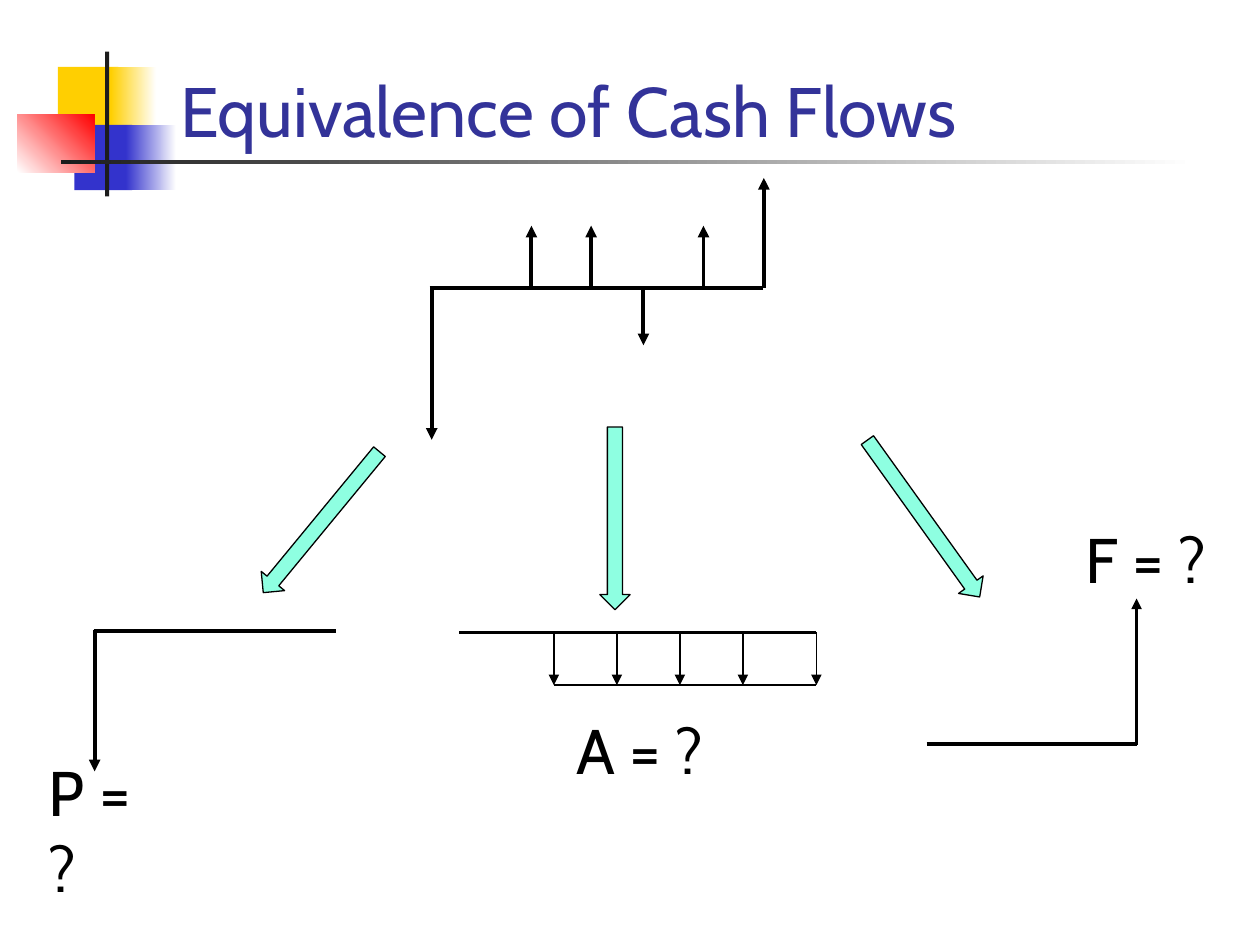
from lxml import etree
from pptx import Presentation
from pptx import util as u
from pptx.dml.color import RGBColor
from pptx.enum import shapes, text
from pptx.oxml.ns import qn

Pt = u.Pt
FONT = "Cabin"
BLACK, DARK, WHITE = "000000", "1C1C1C", "FFFFFF"
YELLOW, BLUE, RED = "FFCF01", "3333CC", "FF0000"
NAVY, MINT = "333399", "8EFFE1"


def color(fmt, value):
    fmt.rgb = RGBColor.from_string(value)


def add_text(tf, content, size=36, fill=BLACK, wrap=False,
             anchor=text.MSO_ANCHOR.TOP, fit=text.MSO_AUTO_SIZE.NONE):
    tf.word_wrap = wrap
    tf.auto_size = fit
    tf.vertical_anchor = anchor
    p = tf.paragraphs[0]
    p.alignment = text.PP_ALIGN.LEFT
    r = p.add_run()
    r.text = content
    r.font.name, r.font.size = FONT, Pt(size)
    color(r.font.color, fill)


def add_label(parent, content, x, y, w, h, wrap=False):
    sp = parent.shapes.add_textbox(Pt(x), Pt(y), Pt(w), Pt(h))
    add_text(sp.text_frame, content, wrap=wrap,
             fit=text.MSO_AUTO_SIZE.SHAPE_TO_FIT_TEXT)


def add_block(s, x, y, w, h, start, end=None, angle=0):
    """Borderless rectangle, solid or fading from start to end."""
    sp = s.shapes.add_shape(shapes.MSO_SHAPE.RECTANGLE, Pt(x), Pt(y), Pt(w), Pt(h))
    sp.shadow.inherit = False
    sp.line.fill.background()
    if end is None:
        sp.fill.solid()
        color(sp.fill.fore_color, start)
        return
    sp.fill.gradient()
    sp.fill.gradient_angle = angle
    for stop, position, value in zip(sp.fill.gradient_stops, (0, 1), (start, end)):
        stop.position = position
        color(stop.color, value)


def add_line(parent, x1, y1, x2, y2, width=2, arrow=False):
    sp = parent.shapes.add_connector(shapes.MSO_CONNECTOR.STRAIGHT,
                                     Pt(x1), Pt(y1), Pt(x2), Pt(y2))
    sp.line.width = Pt(width)
    color(sp.line.color, BLACK)
    if arrow:
        etree.SubElement(sp.line._get_or_add_ln(), qn("a:tailEnd"), type="triangle")
    etree.SubElement(sp._element.spPr, qn("a:effectLst"))


def add_block_arrow(s, x, y, h, rotation):
    sp = s.shapes.add_shape(shapes.MSO_SHAPE.DOWN_ARROW, Pt(x), Pt(y), Pt(17.3), Pt(h))
    sp.shadow.inherit = False
    sp.rotation = rotation
    sp.fill.solid()
    color(sp.fill.fore_color, MINT)
    color(sp.line.color, BLACK)
    sp.line.width = Pt(0.75)


def add_decoration(s):
    add_block(s, 33.1, 38.2, 34.6, 37.4, YELLOW)
    add_block(s, 63.4, 38.2, 25.9, 37.4, YELLOW, WHITE)
    add_block(s, 42.5, 71.3, 33.1, 37.4, BLUE)
    add_block(s, 72, 71.3, 28.8, 37.4, BLUE, WHITE)
    add_block(s, 10, 65.5, 44, 33.1, WHITE, RED, angle=45)
    add_block(s, 60, 29.5, 2.4, 82.8, DARK)
    add_block(s, 34.8, 91.4, 648, 2.4, DARK, WHITE)


def add_original_flow(s):
    g = s.shapes.add_group_shape()
    axis = 164.4
    add_line(g, 245.5, axis, 436, axis, 2.25)
    for x, tip in ((246.7, 251.3), (303.7, 129), (337.8, 129),
                   (367.7, 197.3), (402, 129), (436.5, 101.7)):
        add_line(g, x, axis, x, tip, 2.25, arrow=True)


def add_future(s):
    g = s.shapes.add_group_shape()
    add_line(g, 529.5, 425.3, 649.5, 425.3)
    add_line(g, 649.5, 426, 649.5, 342, arrow=True)
    add_label(g, "F = ?", 613.4, 293.8, 88.6, 50.4)


def add_annuity(s):
    g = s.shapes.add_group_shape()
    top, bottom, first, last = 361.4, 391.5, 316.5, 466.5
    add_line(g, 262.5, top, last, top)
    for x in [first + 36 * i for i in range(4)] + [last]:
        add_line(g, x, top, x, bottom, 1, arrow=True)
    add_line(g, first, bottom, last, bottom, 1)
    add_label(g, "A = ?", 322.6, 403.2, 94.3, 50.4)


def add_present(s):
    g = s.shapes.add_group_shape()
    add_line(g, 53.5, 360.7, 192, 360.7)
    add_line(g, 54.1, 360, 54.1, 440.8, 2.25, arrow=True)
    add_label(g, "P = ?", 20.9, 427, 64.8, 46.8, wrap=True)


def main():
    prs = Presentation()
    prs.slide_width, prs.slide_height = Pt(720), Pt(540)
    s = prs.slides.add_slide(prs.slide_layouts[5])
    add_decoration(s)

    # Title
    title = s.shapes.title
    title.left, title.top, title.width, title.height = Pt(95.8), Pt(36), Pt(498), Pt(54)
    add_text(title.text_frame, "Equivalence of Cash Flows", size=40, fill=NAVY,
             wrap=True, anchor=text.MSO_ANCHOR.BOTTOM)

    # Cash flow diagrams
    add_original_flow(s)
    add_future(s)
    add_annuity(s)
    add_present(s)

    # Arrows from the original flow to its equivalents
    add_block_arrow(s, 175, 246.2, 104.4, 39.5)
    add_block_arrow(s, 342.8, 244, 104.4, 0)
    add_block_arrow(s, 519.1, 241.2, 110.2, 324.4)

    prs.save("out.pptx")


if __name__ == "__main__":
    main()
